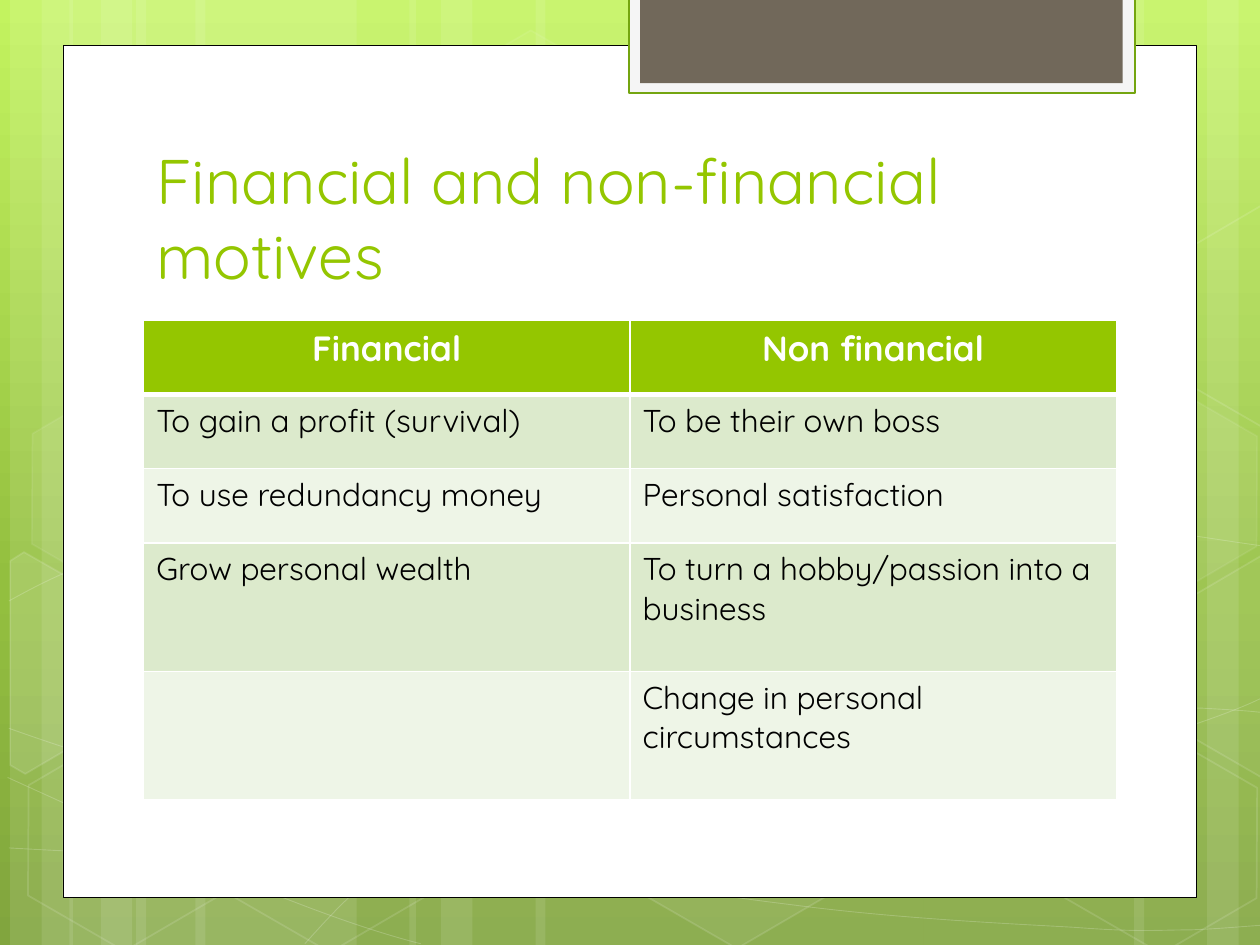
from copy import deepcopy
from math import cos, radians, sin

from lxml import etree
from pptx import Presentation
from pptx.dml.color import RGBColor
from pptx.enum import shapes, text
from pptx.oxml.ns import qn
from pptx.util import Inches, Pt

FONT = "Quicksand"
WHITE = RGBColor(0xFF, 0xFF, 0xFF)
BLACK = RGBColor(0, 0, 0)
LIME = RGBColor(0x94, 0xC6, 0x00)
TAB_EDGE = RGBColor(0x74, 0xA5, 0x10)
TAB_PAPER = RGBColor(0xF5, 0xF5, 0xF5)
TAB_BROWN = RGBColor(0x71, 0x68, 0x5A)
BANDS = [RGBColor(0xDC, 0xEA, 0xCC), RGBColor(0xEE, 0xF5, 0xE7)]
SKY = [(0, RGBColor(0xC3, 0xF3, 0x5F)),
       (0.62, RGBColor(0x93, 0xBF, 0x3F)),
       (1, RGBColor(0x81, 0xA5, 0x3E))]

# Left, width and rotation of the full-height light strips
STRIPS = [(1.08, 1.75, 0), (0.08, 0.5, 0), (0.33, 0.83, 0), (1.55, 1.75, 0),
          (0.55, 0.5, 0), (0.8, 0.83, 0), (7.33, 1.75, 180), (9.58, 0.5, 180),
          (9, 0.83, 180), (4.25, 3.08, 0), (3.25, 0.5, 0), (3.5, 0.83, 0)]
# Each wave is a chain of Bezier knots: start, then two controls and an end
WAVES = [
    [(0.07, 6.73), (0.61, 6.76), (1.15, 6.79), (1.9, 6.78), (2.65, 6.77),
     (3.58, 6.75), (4.58, 6.65), (5.58, 6.55), (7, 6.36), (7.92, 6.17),
     (8.83, 5.98), (9.77, 5.68), (10.07, 5.51)],
    [(0.07, 4.77), (0.36, 4.61), (0.65, 4.46), (1.21, 4.31), (1.78, 4.16),
     (2.59, 3.94), (3.47, 3.87), (4.36, 3.8), (5.44, 3.79), (6.54, 3.87),
     (7.64, 3.95), (9.47, 4.26), (10.07, 4.34)],
    [(0.06, 6.17), (1.27, 6.72), (2.47, 7.27), (3.34, 7.49)],
    [(0.07, 5.78), (0.38, 5.89), (0.7, 6), (1.28, 6.16), (1.86, 6.31),
     (2.73, 6.56), (3.57, 6.73), (4.4, 6.9), (5.45, 7.08), (6.28, 7.18),
     (7.11, 7.29), (8, 7.33), (8.53, 7.36), (9.05, 7.4), (9.19, 7.38),
     (9.45, 7.38), (9.71, 7.37), (9.89, 7.35), (10.07, 7.34)],
    [(2.42, 7.49), (2.6, 7.29), (2.78, 7.09), (3.02, 6.91), (3.26, 6.73),
     (3.6, 6.53), (3.88, 6.39), (4.16, 6.25), (4.33, 6.19), (4.7, 6.09),
     (5.06, 5.99), (5.73, 5.85), (6.08, 5.78), (6.44, 5.71), (6.49, 5.71),
     (6.8, 5.69), (7.11, 5.66), (7.6, 5.63), (7.94, 5.62), (8.29, 5.61),
     (8.86, 5.62), (8.86, 5.62), (9.08, 5.62), (9.31, 5.62), (9.53, 5.62),
     (9.71, 5.63), (9.88, 5.64), (9.97, 5.65), (10.06, 5.66),
     (10.03, 5.65), (10.06, 5.66)],
]
# Left, top, fill opacity and edge opacity in percent
HEXAGONS = [(3.34, 0.36, 4, 8), (4.97, 5.89, 6, 12), (0.11, 5.91, 0, 12),
            (0.14, 3.12, 7, 8), (1.74, 5.92, 0, 12), (8.34, 5.93, 0, 12),
            (8.34, 3.14, 7, 8)]
TILT = 30
# Centre, corners and fill opacity of the hexagons cut by the slide's edges
CUT_HEXAGONS = [
    ((0.36, 5.35), [(0.08, 4.45), (0.19, 4.38), (0.96, 4.82), (0.95, 5.7),
                    (0.2, 6.14), (0.08, 6.07)], 10),
    ((9.85, 5.2), [(9.26, 4.85), (10.01, 4.41), (10.09, 4.46), (10.09, 6.13),
                   (10.02, 6.17), (9.26, 5.73)], 4),
    ((9.85, 2.41), [(9.26, 2.07), (10.01, 1.63), (10.1, 1.68), (10.09, 3.35),
                    (10.02, 3.39), (9.26, 2.95)], 0),
]
MOTIVES = [
    ("Financial", "Non financial"),
    ("To gain a profit (survival)", "To be their own boss"),
    ("To use redundancy money", "Personal satisfaction"),
    ("Grow personal wealth", "To turn a hobby/passion into a business"),
    ("", "Change in personal circumstances"),
]
ROW_HEIGHTS = [0.59, 0.59, 0.59, 1.02, 1.02]


def paint(fill, color, opacity=100):
    """Fill with a colour; zero opacity means no fill."""
    if not opacity:
        fill.background()
        return
    fill.solid()
    fill.fore_color.rgb = color
    if opacity < 100:
        clr = fill._xPr.find(qn("a:solidFill"))[0]
        etree.SubElement(clr, qn("a:alpha"), val=str(opacity * 1000))


def style(shape, color, opacity=100, edge=None, weight=1, edge_opacity=100):
    shape.shadow.inherit = False
    paint(shape.fill, color, opacity)
    if edge is None:
        shape.line.fill.background()
    else:
        shape.line.width = Pt(weight)
        paint(shape.line.fill, edge, edge_opacity)


def add_box(slide, left, top, width, height, kind=shapes.MSO_SHAPE.RECTANGLE):
    return slide.shapes.add_shape(kind, Inches(left), Inches(top),
                                  Inches(width), Inches(height))


def add_outline(slide, points, close):
    start, *others = [(Inches(x), Inches(y)) for x, y in points]
    builder = slide.shapes.build_freeform(*start)
    builder.add_line_segments(others, close=close)
    return builder.convert_to_shape()


def add_wave(slide, knots):
    """Draw the knots, then join every three segments into one curve."""
    wave = add_outline(slide, knots, False)
    segments = list(wave._element.iter(qn("a:lnTo")))
    for i in range(0, len(segments), 3):
        curve = etree.Element(qn("a:cubicBezTo"))
        segments[i].addprevious(curve)
        for segment in segments[i:i + 3]:
            curve.append(segment[0])
            segment.getparent().remove(segment)
    return wave


def add_cut_hexagon(slide, center, corners):
    """Turn the corners back by the tilt, then tilt the whole shape."""
    cx, cy = center
    c, s = cos(radians(TILT)), sin(radians(TILT))
    level = [(cx + c * (x - cx) + s * (y - cy), cy - s * (x - cx) + c * (y - cy))
             for x, y in corners]
    hexagon = add_outline(slide, level, True)
    hexagon.rotation = TILT
    return hexagon


def set_sky(slide):
    fill = slide.background.fill
    fill.gradient()
    fill.gradient_angle = 270
    stop_list = slide._element.find(".//" + qn("a:gsLst"))
    stop_list.append(deepcopy(stop_list[-1]))
    for stop, (position, color) in zip(fill.gradient_stops, SKY):
        stop.position = position
        stop.color.rgb = color


def add_backdrop(slide, height):
    for left, width, rotation in STRIPS:
        strip = add_box(slide, left, 0, width, height)
        strip.rotation = rotation
        style(strip, WHITE, 10)
    for knots in WAVES:
        style(add_wave(slide, knots), WHITE, 0, WHITE, 0.5, 20)
    for left, top, opacity, edge_opacity in HEXAGONS:
        hexagon = add_box(slide, left, top, 1.75, 1.52, shapes.MSO_SHAPE.HEXAGON)
        hexagon.rotation = TILT
        hexagon.adjustments[0] = 0.285
        style(hexagon, WHITE, opacity, WHITE, 1, edge_opacity)
    for center, corners, opacity in CUT_HEXAGONS:
        style(add_cut_hexagon(slide, center, corners), WHITE, opacity, WHITE, 1, 12)


def add_card(slide, left, top, width, height):
    style(add_box(slide, left, top, width, height), WHITE, 100, BLACK, 0.5)
    # Tab hanging from the top edge
    style(add_box(slide, 4.99, -0.02, 4.02, 0.76), TAB_PAPER, 100, TAB_EDGE, 1.25)
    style(add_box(slide, 5.08, -0.02, 3.83, 0.68), TAB_BROWN)


def set_title(slide, left, top, width, height):
    title = slide.shapes.title
    title.left, title.top = Inches(left), Inches(top)
    title.width, title.height = Inches(width), Inches(height)
    frame = title.text_frame
    frame.text = "Financial and non-financial motives"
    frame.word_wrap = True
    frame.auto_size = text.MSO_AUTO_SIZE.NONE
    frame.vertical_anchor = text.MSO_ANCHOR.BOTTOM
    heading = frame.paragraphs[0]
    heading.alignment = text.PP_ALIGN.LEFT
    heading.font.name, heading.font.size = FONT, Pt(36)
    heading.font.color.rgb = LIME


def add_borders(cell, top, bottom):
    properties = cell._tc.get_or_add_tcPr()
    for side, weight in zip("LRTB", (1, 1, top, bottom)):
        line = etree.SubElement(properties, qn("a:ln" + side), w=str(Pt(weight)))
        solid = etree.SubElement(line, qn("a:solidFill"))
        etree.SubElement(solid, qn("a:srgbClr"), val=str(WHITE))


def add_motives(slide, left, top, width):
    table = slide.shapes.add_table(
        len(MOTIVES), 2, Inches(left), Inches(top), Inches(width),
        Inches(sum(ROW_HEIGHTS))).table
    for r, (motives, height) in enumerate(zip(MOTIVES, ROW_HEIGHTS)):
        table.rows[r].height = Inches(height)
        header = r == 0
        for cell, motive in zip(table.rows[r].cells, motives):
            add_borders(cell, 3 if r == 1 else 1, 3 if header else 1)
            paint(cell.fill, LIME if header else BANDS[(r - 1) % 2])
            cell.text = motive
            paragraph = cell.text_frame.paragraphs[0]
            if header:
                paragraph.alignment = text.PP_ALIGN.CENTER
            font = paragraph.font
            font.name, font.size = FONT, Pt(20 if header else 18)
            font.bold = header
            font.color.rgb = WHITE if header else BLACK


deck = Presentation()
deck.slide_width, deck.slide_height = Inches(10), Inches(7.5)
motives_slide = deck.slides.add_slide(deck.slide_layouts[5])
set_sky(motives_slide)
add_backdrop(motives_slide, 7.5)
add_card(motives_slide, 0.5, 0.36, 9, 6.76)
set_title(motives_slide, 1.14, 1.12, 7.68, 1.25)
# Bring the title in front of the card
motives_slide.shapes._spTree.append(motives_slide.shapes.title._element)
add_motives(motives_slide, 1.14, 2.54, 7.72)
deck.save("out.pptx")
